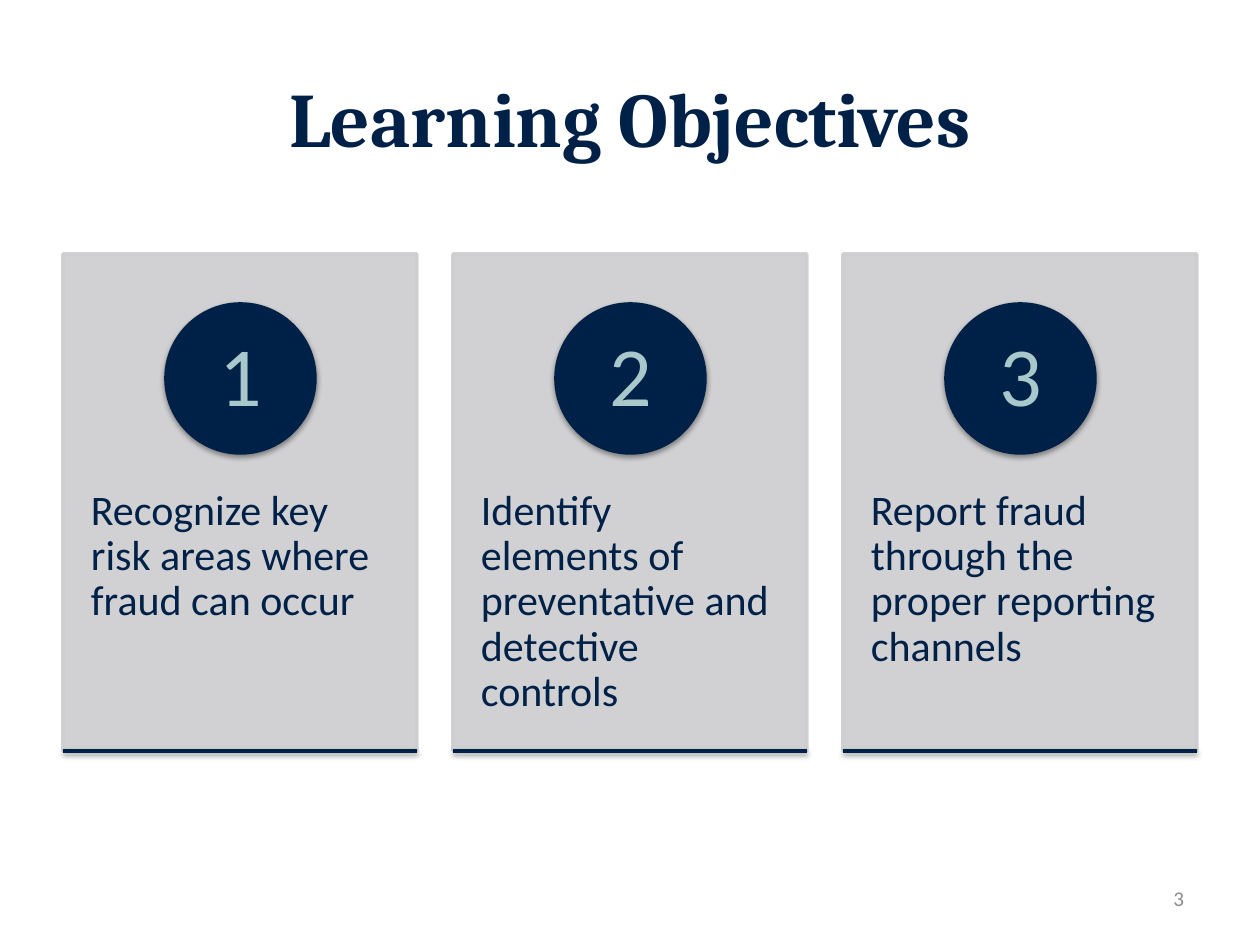
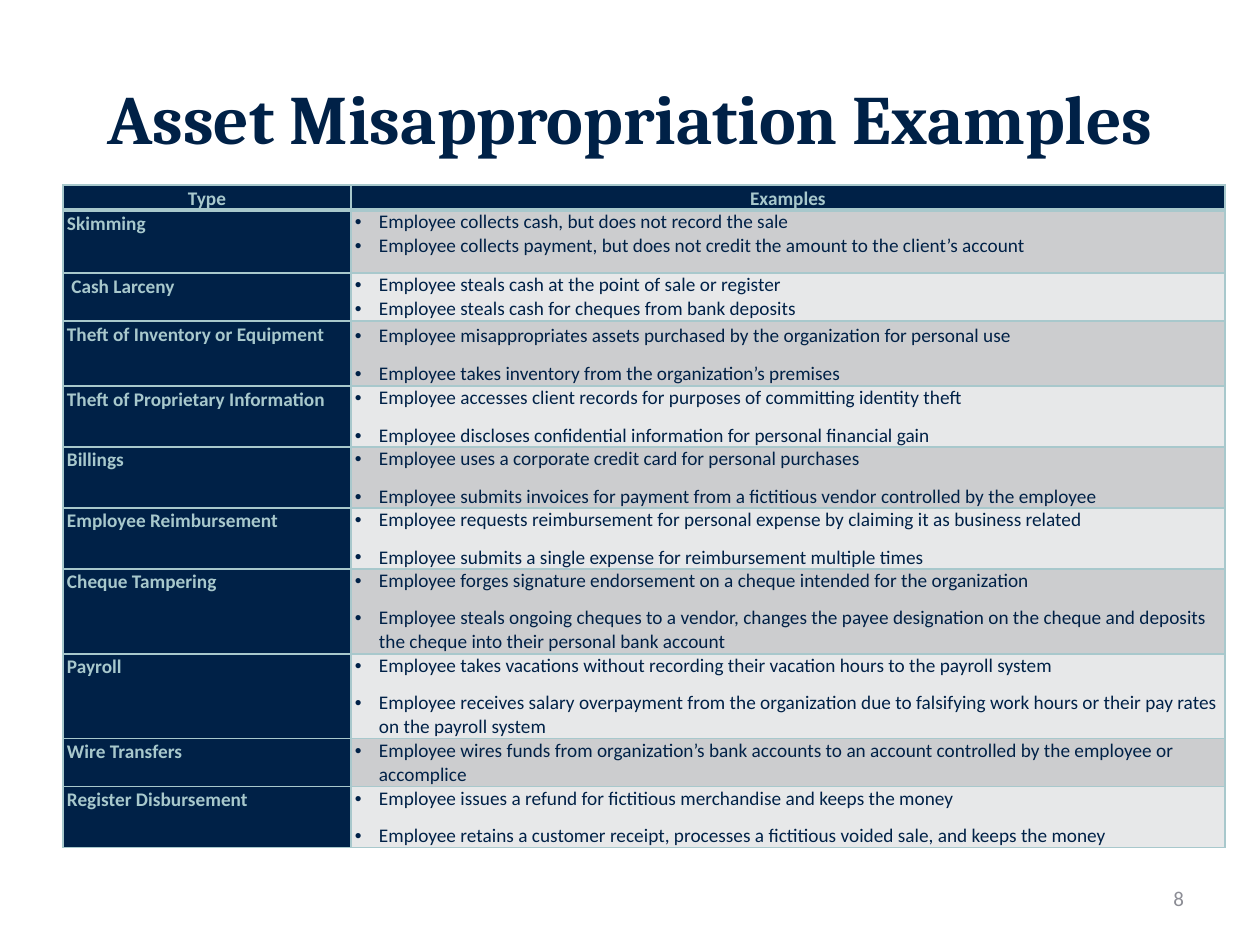
from dataclasses import dataclass

from lxml.etree import SubElement
from pptx import Presentation
from pptx.dml.color import RGBColor
from pptx.enum.shapes import MSO_CONNECTOR, MSO_SHAPE
from pptx.enum.text import MSO_ANCHOR, MSO_AUTO_SIZE, PP_ALIGN
from pptx.oxml.ns import qn
from pptx.util import Emu, Pt

COLOURS = {
    "navy": "002147",
    "aqua": "A8C8CC",
    "silver": "CCCDCF",
    "pale": "E7E8E9",
    "page_number": "8C8D95",
}
TITLE_FONT, BODY_FONT = "Cambria", "Calibri"
PX_PER_INCH = 126


def px(length: int) -> Emu:
    return Emu(round(length * 914400 / PX_PER_INCH))


def colour(name: str) -> RGBColor:
    return RGBColor.from_string(COLOURS[name])


@dataclass(frozen=True)
class Box:
    left: int
    top: int
    width: int
    height: int

    def emu(self) -> tuple:
        return px(self.left), px(self.top), px(self.width), px(self.height)

    def moved(self, step: int) -> "Box":
        return Box(self.left + step, self.top, self.width, self.height)


@dataclass(frozen=True)
class Style:
    size: float
    colour: str
    font: str = BODY_FONT
    bold: bool = False
    align: PP_ALIGN = PP_ALIGN.LEFT
    spacing: float = 1.0


@dataclass(frozen=True)
class FraudType:
    name: str
    examples: tuple
    height: int
    compact: bool = False


TITLE_BOX = Box(63, 38, 1134, 157)
NUMBER_BOX = Box(903, 873, 294, 50)
PAGE_NUMBER = Style(12, "page_number", align=PP_ALIGN.RIGHT)

# Objective cards: boxes of the first card, repeated at one pitch
CARD_PITCH = 390
CARD = Box(63, 254, 354, 497)
CARD_TEXT = Box(63, 444, 354, 297)
CIRCLE = Box(166, 304, 149, 149)
CIRCLE_TEXT = Box(188, 326, 106, 106)
OBJECTIVE = Style(24, "navy", spacing=0.9)
CIRCLE_NUMBER = Style(48, "aqua", align=PP_ALIGN.CENTER, spacing=0.9)
OBJECTIVES = (
    "Recognize key risk areas where fraud can occur",
    "Identify elements of preventative and detective controls",
    "Report fraud through the proper reporting channels",
)

# Table of fraud types
TABLE_LEFT, TABLE_TOP = 63, 185
COLUMN_WIDTHS = (288, 874)
HEADER_HEIGHT = 25
BULLET_INDENT = 24
HEADER = Style(11, "aqua", bold=True, align=PP_ALIGN.CENTER, spacing=1.07)
TYPE_NAME = Style(11, "aqua", bold=True, spacing=1.07)
EXAMPLE = Style(11, "navy")
FRAUD_TYPES = (
    FraudType("Skimming", (
        "Employee collects cash, but does not record the sale",
        "Employee collects payment, but does not credit the amount to the client’s account",
    ), 63, compact=True),
    FraudType(" Cash Larceny", (
        "Employee steals cash at the point of sale or register",
        "Employee steals cash for cheques from bank deposits",
    ), 48, compact=True),
    FraudType("Theft of Inventory or Equipment", (
        "Employee misappropriates assets purchased by the organization for personal use",
        "Employee takes inventory from the organization’s premises",
    ), 65),
    FraudType("Theft of Proprietary Information", (
        "Employee accesses client records for purposes of committing identity theft",
        "Employee discloses confidential information for personal financial gain",
    ), 61),
    FraudType("Billings", (
        "Employee uses a corporate credit card for personal purchases",
        "Employee submits invoices for payment from a fictitious vendor controlled by the employee",
    ), 61),
    FraudType("Employee Reimbursement", (
        "Employee requests reimbursement for personal expense by claiming it as business related",
        "Employee submits a single expense for reimbursement multiple times",
    ), 61),
    FraudType("Cheque Tampering", (
        "Employee forges signature endorsement on a cheque intended for the organization",
        "Employee steals ongoing cheques to a vendor, changes the payee designation on the cheque "
        "and deposits the cheque into their personal bank account",
    ), 85),
    FraudType("Payroll", (
        "Employee takes vacations without recording their vacation hours to the payroll system",
        "Employee receives salary overpayment from the organization due to falsifying work hours "
        "or their pay rates on the payroll system",
    ), 85),
    FraudType("Wire Transfers", (
        "Employee wires funds from organization’s bank accounts to an account controlled by the "
        "employee or accomplice",
    ), 48),
    FraudType("Register Disbursement", (
        "Employee issues a refund for fictitious merchandise and keeps the money",
        "Employee retains a customer receipt, processes a fictitious voided sale, and keeps the money",
    ), 61),
)


# Text helpers
def format_para(para, style: Style) -> None:
    para.alignment = style.align
    para.line_spacing = style.spacing
    for span in para.runs:
        span.font.name = style.font
        span.font.size = Pt(style.size)
        span.font.bold = style.bold
        span.font.color.rgb = colour(style.colour)


def set_margins(holder, side: int, vertical: int) -> None:
    holder.margin_left = holder.margin_right = px(side)
    holder.margin_top = holder.margin_bottom = px(vertical)


def add_text(page, box: Box, text: str, style: Style, anchor=MSO_ANCHOR.MIDDLE, margins=(13, 6)):
    frame = page.shapes.add_textbox(*box.emu()).text_frame
    frame.word_wrap = True
    frame.vertical_anchor = anchor
    set_margins(frame, *margins)
    frame.text = text
    format_para(frame.paragraphs[0], style)


def add_page(deck, title: str, title_size: float, number: int):
    page = deck.slides.add_slide(deck.slide_layouts.get_by_name("Title Only"))
    heading = page.shapes.title
    heading.left, heading.top, heading.width, heading.height = TITLE_BOX.emu()
    frame = heading.text_frame
    frame.auto_size = MSO_AUTO_SIZE.NONE
    frame.vertical_anchor = MSO_ANCHOR.MIDDLE
    frame.text = title
    format_para(frame.paragraphs[0],
                Style(title_size, "navy", TITLE_FONT, True, PP_ALIGN.CENTER))
    add_text(page, NUMBER_BOX, str(number), PAGE_NUMBER)
    return page


# Shape helpers
def add_shadow(shape) -> None:
    effects = SubElement(shape._element.spPr, qn("a:effectLst"))
    shadow = SubElement(effects, qn("a:outerShdw"), blurRad=str(Pt(3.1)), dist=str(Pt(1.6)),
                        dir="5400000", rotWithShape="0")
    black = SubElement(shadow, qn("a:srgbClr"), val="000000")
    SubElement(black, qn("a:alpha"), val="38000")


def set_line(shape, name: str) -> None:
    shape.line.color.rgb = colour(name)
    shape.line.width = Pt(2)


def add_filled(page, kind: MSO_SHAPE, box: Box, name: str):
    shape = page.shapes.add_shape(kind, *box.emu())
    shape.fill.solid()
    shape.fill.fore_color.rgb = colour(name)
    set_line(shape, name)
    return shape


def add_objective(page, index: int, objective: str) -> None:
    step = index * CARD_PITCH
    card_box = CARD.moved(step)
    card = add_filled(page, MSO_SHAPE.RECTANGLE, card_box, "silver")
    card.shadow.inherit = False
    for tint in card._element.spPr.iter(qn("a:srgbClr")):
        SubElement(tint, qn("a:alpha"), val="90000")
    add_text(page, CARD_TEXT.moved(step), objective, OBJECTIVE, MSO_ANCHOR.TOP, (28, 45))

    add_shadow(add_filled(page, MSO_SHAPE.OVAL, CIRCLE.moved(step), "navy"))
    add_text(page, CIRCLE_TEXT.moved(step), str(index + 1), CIRCLE_NUMBER, margins=(11, 1))

    bottom = px(card_box.top + card_box.height)
    base = page.shapes.add_connector(MSO_CONNECTOR.STRAIGHT, px(card_box.left), bottom,
                                     px(card_box.left + card_box.width), bottom)
    set_line(base, "navy")
    add_shadow(base)


# Table helpers
def format_cell(cell, fill: str, anchor, top: int = 1, bottom: int = 1) -> None:
    properties = cell._tc.get_or_add_tcPr()
    for side, width in (("L", 1), ("R", 1), ("T", top), ("B", bottom)):
        line = SubElement(properties, qn(f"a:ln{side}"), w=str(Pt(width)))
        paint = SubElement(line, qn("a:solidFill"))
        SubElement(paint, qn("a:srgbClr"), val=COLOURS["aqua"])
    cell.fill.solid()
    cell.fill.fore_color.rgb = colour(fill)
    cell.vertical_anchor = anchor
    set_margins(cell, 4, 0)


def fill_label(cell, text: str, style: Style) -> None:
    cell.text_frame.text = text
    para = cell.text_frame.paragraphs[0]
    format_para(para, style)
    para.space_after = Pt(8)


def fill_examples(cell, fraud: FraudType) -> None:
    cell.text_frame.text = "\n".join(fraud.examples)
    for para in cell.text_frame.paragraphs:
        properties = para._p.get_or_add_pPr()
        properties.set("marL", str(px(BULLET_INDENT)))
        properties.set("indent", str(-px(BULLET_INDENT)))
        SubElement(properties, qn("a:buFont"), typeface="Arial")
        SubElement(properties, qn("a:buChar"), char="•")
        format_para(para, EXAMPLE)
        para.space_after = Pt(0 if fraud.compact else 8)


def add_fraud_table(page) -> None:
    heights = [HEADER_HEIGHT] + [fraud.height for fraud in FRAUD_TYPES]
    box = Box(TABLE_LEFT, TABLE_TOP, sum(COLUMN_WIDTHS), sum(heights))
    table = page.shapes.add_table(len(heights), len(COLUMN_WIDTHS), *box.emu()).table
    table.horz_banding = False
    for column, width in zip(table.columns, COLUMN_WIDTHS):
        column.width = px(width)
    for row, height in zip(table.rows, heights):
        row.height = px(height)

    headers = (("Type", MSO_ANCHOR.TOP), ("Examples", MSO_ANCHOR.BOTTOM))
    for index, (text, anchor) in enumerate(headers):
        cell = table.cell(0, index)
        format_cell(cell, "navy", anchor, bottom=3)
        fill_label(cell, text, HEADER)

    for index, fraud in enumerate(FRAUD_TYPES, start=1):
        name, examples = table.cell(index, 0), table.cell(index, 1)
        top = 3 if index == 1 else 1
        format_cell(name, "navy", MSO_ANCHOR.TOP, top)
        fill_label(name, fraud.name, TYPE_NAME)
        format_cell(examples, "silver" if index % 2 else "pale",
                    MSO_ANCHOR.TOP if fraud.compact else MSO_ANCHOR.BOTTOM, top)
        fill_examples(examples, fraud)


def main() -> None:
    deck = Presentation()
    deck.slide_width, deck.slide_height = px(1260), px(945)

    # Learning objectives
    page = add_page(deck, "Learning Objectives", 44, 3)
    for index, objective in enumerate(OBJECTIVES):
        add_objective(page, index, objective)

    # Asset misappropriation
    page = add_page(deck, "Asset Misappropriation Examples", 39.6, 8)
    add_fraud_table(page)

    deck.save("out.pptx")


if __name__ == "__main__":
    main()
